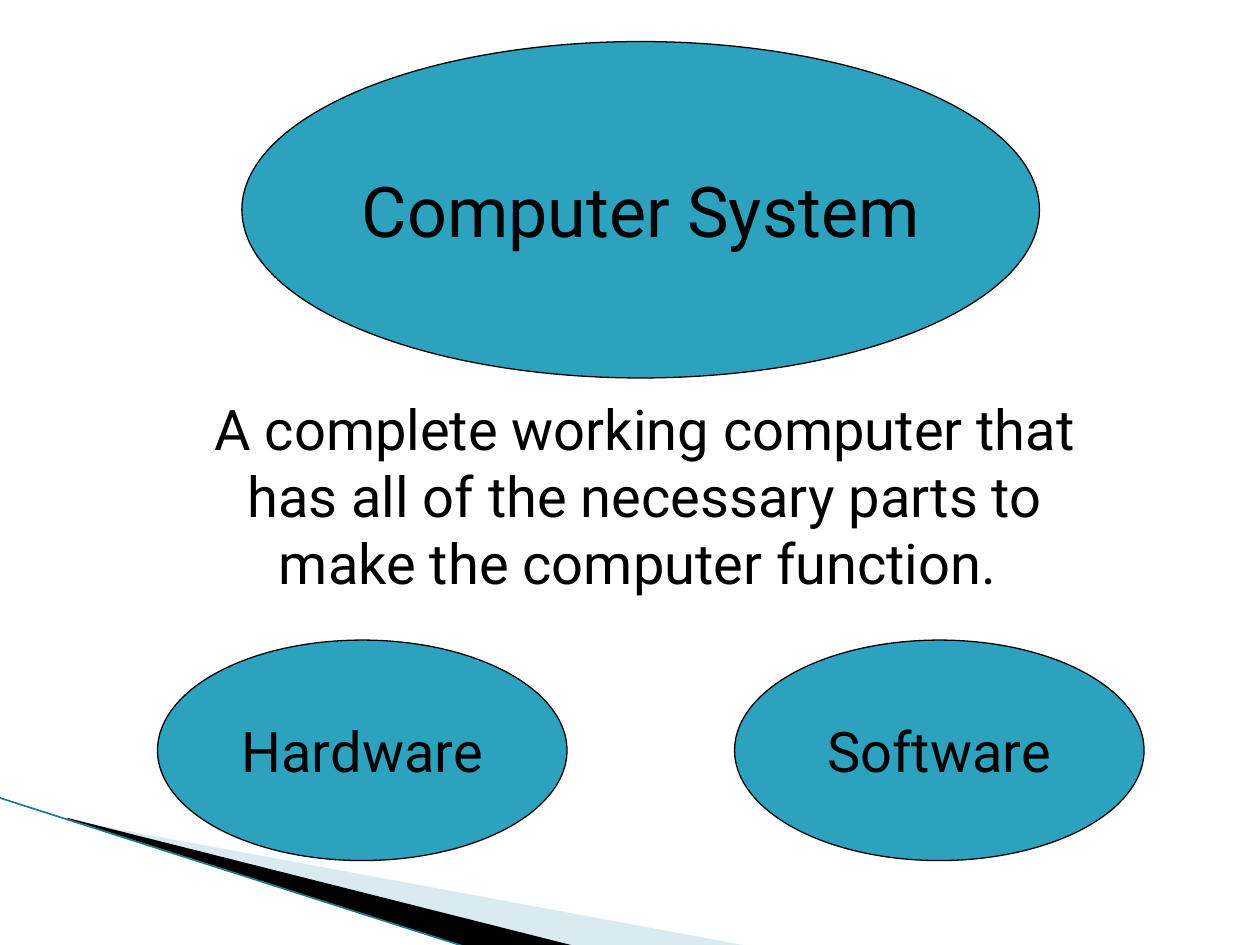
from lxml import etree
from pptx import Presentation
from pptx.dml.color import RGBColor
from pptx.enum.shapes import MSO_CONNECTOR, MSO_SHAPE
from pptx.enum.text import MSO_ANCHOR, PP_ALIGN
from pptx.oxml.ns import qn
from pptx.util import Inches, Pt

OVAL = MSO_SHAPE.OVAL
STRAIGHT = MSO_CONNECTOR.STRAIGHT
MIDDLE = MSO_ANCHOR.MIDDLE
CENTER = PP_ALIGN.CENTER

BLACK = RGBColor(0, 0, 0)
TEAL = RGBColor(0x2D, 0xA2, 0xBF)
PALE = RGBColor(0xA0, 0xCB, 0xDC)
EDGE = RGBColor(0x1F, 0x7A, 0x90)

# Text, left, top, width, height, font size
OVALS = [
    ("Hardware", 1.25, 5.08, 3.25, 1.75, 32),
    ("Software", 5.83, 5.08, 3.25, 1.75, 32),
    ("Computer System", 1.92, 0.33, 6.33, 2.67, 40),
]
MEANING = ("A complete working computer that has all of the necessary "
           "parts to make the computer function. ")
MEANING_BOX = (1.58, 3.08, 7.08, 1.72)

# Corner points, colour, opacity in percent
WEDGES = [
    ([(0.55, 6.51), (5.95, 7.51), (4.56, 7.51), (0.55, 6.5)], PALE, 40),
    ([(0.53, 6.49), (4.57, 7.51), (3.72, 7.52), (0.54, 6.5)], BLACK, 100),
]
EDGE_ENDS = (-0.01, 6.33, 3.71, 7.52)


def inches(values):
    return [Inches(v) for v in values]


def write(shape, text, size):
    para = shape.text_frame.paragraphs[0]
    para.alignment = CENTER
    run = para.add_run()
    run.text = text
    for name, value in {"name": "Roboto", "size": Pt(size)}.items():
        setattr(run.font, name, value)
    run.font.color.rgb = BLACK


def add_wedge(slide, points, color, opacity):
    start, *rest = [inches(p) for p in points]
    pen = slide.shapes.build_freeform(*start)
    pen.add_line_segments(rest, close=True)
    wedge = pen.convert_to_shape()
    wedge.shadow.inherit = False
    wedge.line.fill.background()
    wedge.fill.solid()
    wedge.fill.fore_color.rgb = color
    if opacity < 100:
        tint = wedge.fill._xPr.find(qn("a:solidFill"))[0]
        etree.SubElement(tint, qn("a:alpha"), val=str(opacity * 1000))


def add_edge(slide):
    edge = slide.shapes.add_connector(STRAIGHT, *inches(EDGE_ENDS))
    edge.line.color.rgb = EDGE
    edge.line.width = Pt(0.95)
    etree.SubElement(edge._element.spPr, qn("a:effectLst"))


def add_oval(slide, text, *box, size):
    oval = slide.shapes.add_shape(OVAL, *inches(box))
    oval.shadow.inherit = False
    oval.fill.solid()
    oval.fill.fore_color.rgb = TEAL
    oval.line.color.rgb = BLACK
    oval.line.width = Pt(0.75)
    oval.text_frame.word_wrap = False
    oval.text_frame.vertical_anchor = MIDDLE
    write(oval, text, size)


def main():
    deck = Presentation()
    deck.slide_width, deck.slide_height = inches((10, 7.5))
    slide = deck.slides.add_slide(deck.slide_layouts[6])
    for wedge in WEDGES:
        add_wedge(slide, *wedge)
    add_edge(slide)
    box = slide.shapes.add_textbox(*inches(MEANING_BOX))
    box.text_frame.word_wrap = True
    write(box, MEANING, 32)
    for *place, size in OVALS:
        add_oval(slide, *place, size=size)
    deck.save("out.pptx")


if __name__ == "__main__":
    main()
